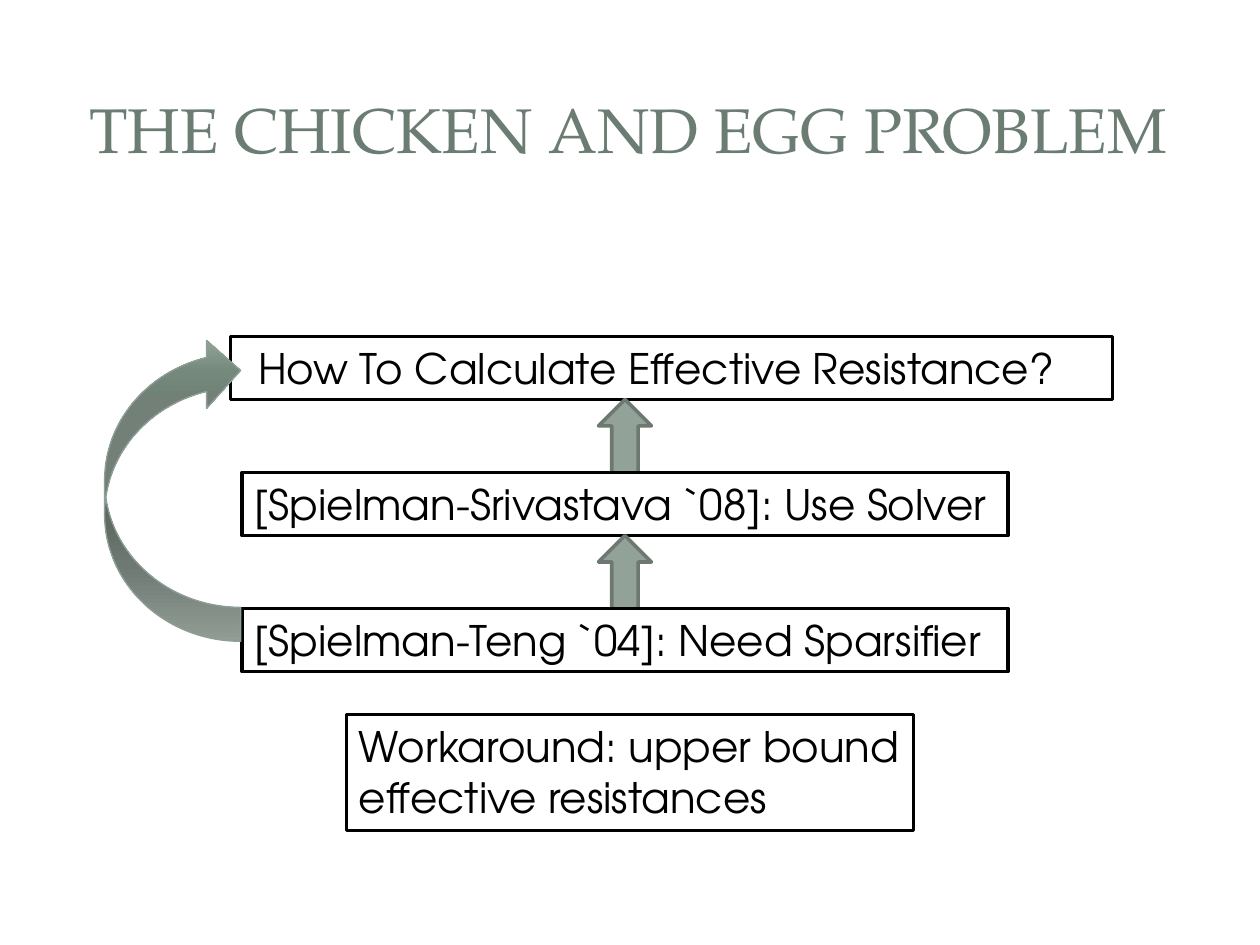
from pptx import Presentation
from pptx.dml.color import RGBColor
from pptx.enum.shapes import MSO_SHAPE
from pptx.enum.text import MSO_ANCHOR, PP_ALIGN
from pptx.oxml import parse_xml
from pptx.oxml.ns import nsdecls
from pptx.util import Inches, Pt

STEPS = ["[Spielman-Srivastava `08]: Use Solver", "[Spielman-Teng `04]: Need Sparsifier"]
STEP_PITCH = 1.08
LOOP_STOPS = [(0, "B6C3BB"), (25, "8B9890"), (38, "79867E"), (55, "728078"),
              (80, "708176"), (88, "75887C"), (100, "91A79A")]


def color(value):
    """Turn a hex string into a colour."""
    return RGBColor.from_string(value)


def add_outlined(slide, kind, place, line, width, fill=None):
    """Add a preset shape with an outline and an optional solid fill."""
    shape = slide.shapes.add_shape(kind, *map(Inches, place))
    shape.shadow.inherit = False
    if fill:
        shape.fill.solid()
        shape.fill.fore_color.rgb = color(fill)
    shape.line.color.rgb = color(line)
    shape.line.width = Pt(width)
    return shape


def write(shape, text, font, size, ink, align, anchor):
    """Put one formatted paragraph into a shape."""
    frame = shape.text_frame
    frame.word_wrap = True
    frame.vertical_anchor = anchor
    paragraph = frame.paragraphs[0]
    paragraph.text = text
    paragraph.alignment = align
    for name, value in {"name": font, "size": Pt(size)}.items():
        setattr(paragraph.font, name, value)
    paragraph.font.color.rgb = color(ink)
    return paragraph


def add_title(slide, text):
    """Add the centred heading."""
    heading = slide.shapes.add_textbox(*map(Inches, (0.47, 0.45, 9.03, 1.14)))
    write(heading, text, "TeX Gyre Pagella", 36, "6B7D72", PP_ALIGN.CENTER, MSO_ANCHOR.MIDDLE)


def add_statement(slide, text, place, indent=0):
    """Add a white box with a black border and left-aligned text."""
    box = add_outlined(slide, MSO_SHAPE.RECTANGLE, place, "000000", 2, "FFFFFF")
    paragraph = write(box, text, "TeX Gyre Adventor", 24, "000000", PP_ALIGN.LEFT, MSO_ANCHOR.TOP)
    if indent:
        properties = paragraph._p.get_or_add_pPr()
        properties.set("marL", str(Inches(indent)))
        properties.set("indent", "0")


def add_step(slide, text, top):
    """Add a step box with the arrow that leads up from it."""
    arrow = add_outlined(slide, MSO_SHAPE.DOWN_ARROW, (4.75, top - 0.58, 0.42, 0.59),
                         "6D7871", 2, "93A299")
    arrow.rotation = 180
    add_statement(slide, text, (1.92, top, 6.08, 0.5))


def add_loop_arrow(slide):
    """Add the curved gradient arrow from the last step back to the question."""
    loop = add_outlined(slide, MSO_SHAPE.CURVED_RIGHT_ARROW, (0.83, 2.67, 1.08, 2.42),
                        "8F9F96", 0.75)
    stops = "".join(f'<a:gs pos="{at * 1000}"><a:srgbClr val="{tone}"/></a:gs>'
                    for at, tone in LOOP_STOPS)
    gradient = parse_xml(f'<a:gradFill {nsdecls("a")} rotWithShape="1"><a:gsLst>{stops}</a:gsLst>'
                         '<a:lin ang="5400000" scaled="0"/></a:gradFill>')
    properties = loop.element.spPr
    properties.xfrm.set("flipV", "1")
    properties.insert(2, gradient)


def main():
    """Build the slide and save it."""
    deck = Presentation()
    deck.slide_width, deck.slide_height = Inches(10), Inches(7.5)
    slide = deck.slides.add_slide(deck.slide_layouts[6])
    add_title(slide, "THE CHICKEN AND EGG PROBLEM")
    add_statement(slide, "How To Calculate Effective Resistance?", (1.83, 2.67, 7, 0.5), 0.12)
    for index, text in enumerate(STEPS):
        add_step(slide, text, 3.75 + index * STEP_PITCH)
    add_statement(slide, "Workaround: upper bound effective resistances", (2.75, 5.67, 4.5, 0.92))
    add_loop_arrow(slide)
    deck.save("out.pptx")


if __name__ == "__main__":
    main()
